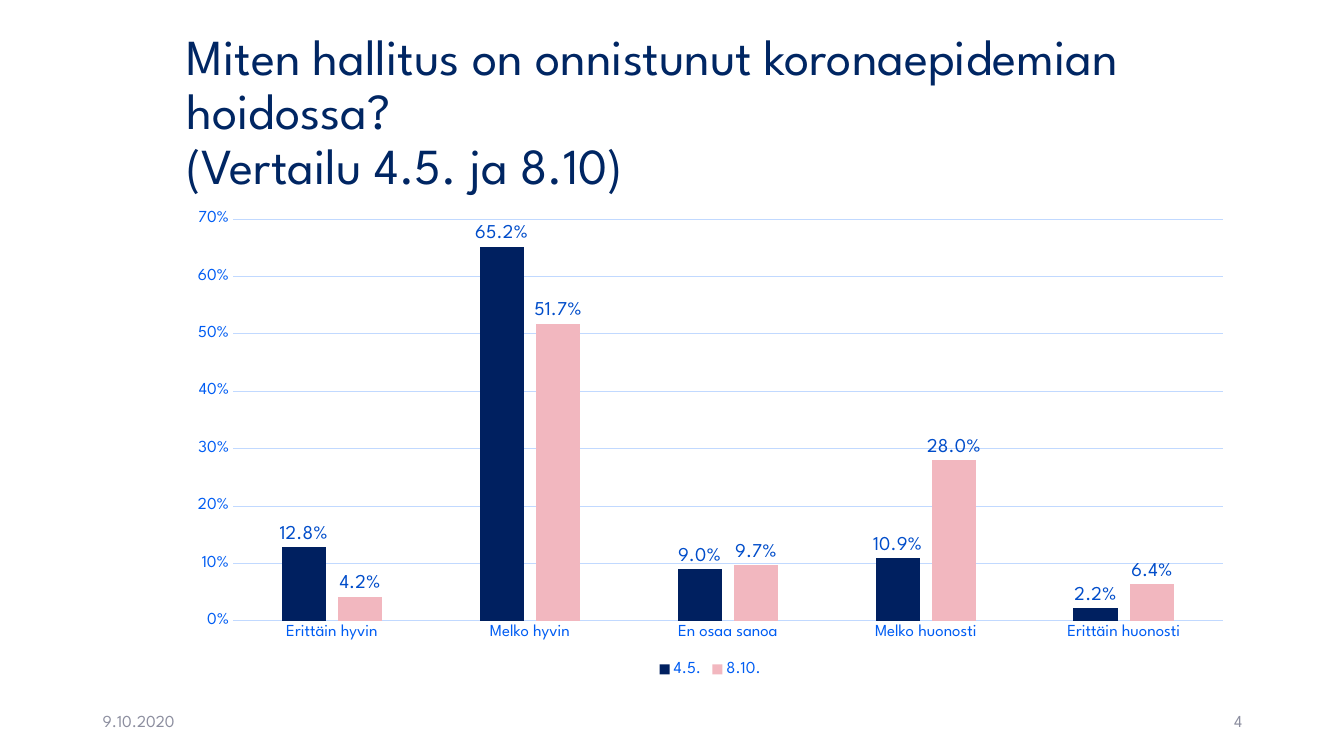
from pptx import Presentation
from pptx.chart.data import CategoryChartData
from pptx.dml.color import RGBColor
from pptx.enum import chart as ch, text
from pptx.util import Inches, Pt

FONT = "League Spartan"
TITLE_NAVY = RGBColor(0x00, 0x26, 0x63)
BAR_NAVY = RGBColor(0x00, 0x20, 0x60)
BAR_PINK = RGBColor(0xF2, 0xB7, 0xBF)
AXIS_BLUE = RGBColor(0x00, 0x5D, 0xF3)
LABEL_BLUE = RGBColor(0x00, 0x4D, 0xCA)
GRID_BLUE = RGBColor(0xC1, 0xD9, 0xFF)
FOOTER_GREY = RGBColor(0x8C, 0x8E, 0x9F)

TITLE_LINES = ["Miten hallitus on onnistunut koronaepidemian hoidossa?",
               "(Vertailu 4.5. ja 8.10)"]
ANSWERS = ["Erittäin hyvin", "Melko hyvin", "En osaa sanoa",
           "Melko huonosti", "Erittäin huonosti"]
POLLS = [("4.5.", [0.128, 0.652, 0.09, 0.109, 0.022], BAR_NAVY),
         ("8.10.", [0.042, 0.517, 0.097, 0.28, 0.064], BAR_PINK)]


def style_font(font, size, color):
    font.name = FONT
    font.size = Pt(size)
    font.bold = False
    font.color.rgb = color


def style_line(line, color):
    line.color.rgb = color
    line.width = Pt(0.75)


def add_title(slide, left, top, width, height):
    title = slide.shapes.title
    title.left, title.top, title.width, title.height = left, top, width, height
    frame = title.text_frame
    frame.word_wrap = True
    frame.auto_size = text.MSO_AUTO_SIZE.NONE
    frame.vertical_anchor = text.MSO_ANCHOR.MIDDLE
    paragraph = frame.paragraphs[0]
    paragraph.alignment = text.PP_ALIGN.LEFT
    paragraph.line_spacing = 0.9
    paragraph.space_before = Pt(0)
    for index, line in enumerate(TITLE_LINES):
        if index:
            paragraph.add_line_break()
        run = paragraph.add_run()
        run.text = line
        style_font(run.font, 36, TITLE_NAVY)


def add_footer(slide, words, alignment, left, top, width, height):
    frame = slide.shapes.add_textbox(left, top, width, height).text_frame
    frame.word_wrap = True
    frame.vertical_anchor = text.MSO_ANCHOR.MIDDLE
    paragraph = frame.paragraphs[0]
    paragraph.alignment = alignment
    run = paragraph.add_run()
    run.text = words
    style_font(run.font, 12, FOOTER_GREY)


def style_axes(chart):
    category_axis, value_axis = chart.category_axis, chart.value_axis
    for axis in (category_axis, value_axis):
        axis.major_tick_mark = axis.minor_tick_mark = ch.XL_TICK_MARK.NONE
        style_font(axis.tick_labels.font, 12, AXIS_BLUE)
    style_line(category_axis.format.line, GRID_BLUE)
    value_axis.minimum_scale, value_axis.maximum_scale = 0, 0.7
    value_axis.major_unit = 0.1
    value_axis.tick_labels.number_format = "0%"
    value_axis.tick_labels.number_format_is_linked = False
    value_axis.format.line.fill.background()
    value_axis.has_major_gridlines = True
    style_line(value_axis.major_gridlines.format.line, GRID_BLUE)


def style_series(series, color):
    series.format.fill.solid()
    series.format.fill.fore_color.rgb = color
    series.invert_if_negative = False
    labels = series.data_labels
    labels.show_value = True
    labels.position = ch.XL_LABEL_POSITION.OUTSIDE_END
    labels.number_format = "0.0%"
    labels.number_format_is_linked = False
    style_font(labels.font, 14, LABEL_BLUE)


def add_poll_chart(slide, left, top, width, height):
    data = CategoryChartData(number_format="0.0%")
    data.categories = ANSWERS
    for name, shares, _ in POLLS:
        data.add_series(name, shares)
    chart = slide.shapes.add_chart(ch.XL_CHART_TYPE.COLUMN_CLUSTERED,
                                   left, top, width, height, data).chart
    style_font(chart.font, 10, TITLE_NAVY)
    chart.has_title = False
    chart.has_legend = True
    chart.legend.position = ch.XL_LEGEND_POSITION.BOTTOM
    chart.legend.include_in_layout = False
    style_font(chart.legend.font, 12, AXIS_BLUE)
    plot = chart.plots[0]
    plot.gap_width = 219
    plot.overlap = -27
    plot.vary_by_categories = False
    for series, (_, _, color) in zip(plot.series, POLLS):
        style_series(series, color)
    style_axes(chart)


def main():
    presentation = Presentation()
    presentation.slide_width = Inches(13.33)
    presentation.slide_height = Inches(7.5)
    slide = presentation.slides.add_slide(presentation.slide_layouts[5])
    left, width = Inches(1.75), Inches(10.59)
    add_title(slide, left, Inches(0.4), width, Inches(1.45))
    footer_box = Inches(6.95), Inches(3), Inches(0.4)
    add_footer(slide, "9.10.2020", text.PP_ALIGN.LEFT, Inches(0.92), *footer_box)
    add_footer(slide, "4", text.PP_ALIGN.RIGHT, Inches(9.42), *footer_box)
    add_poll_chart(slide, left, Inches(2), width, Inches(4.76))
    presentation.save("out.pptx")


if __name__ == "__main__":
    main()
